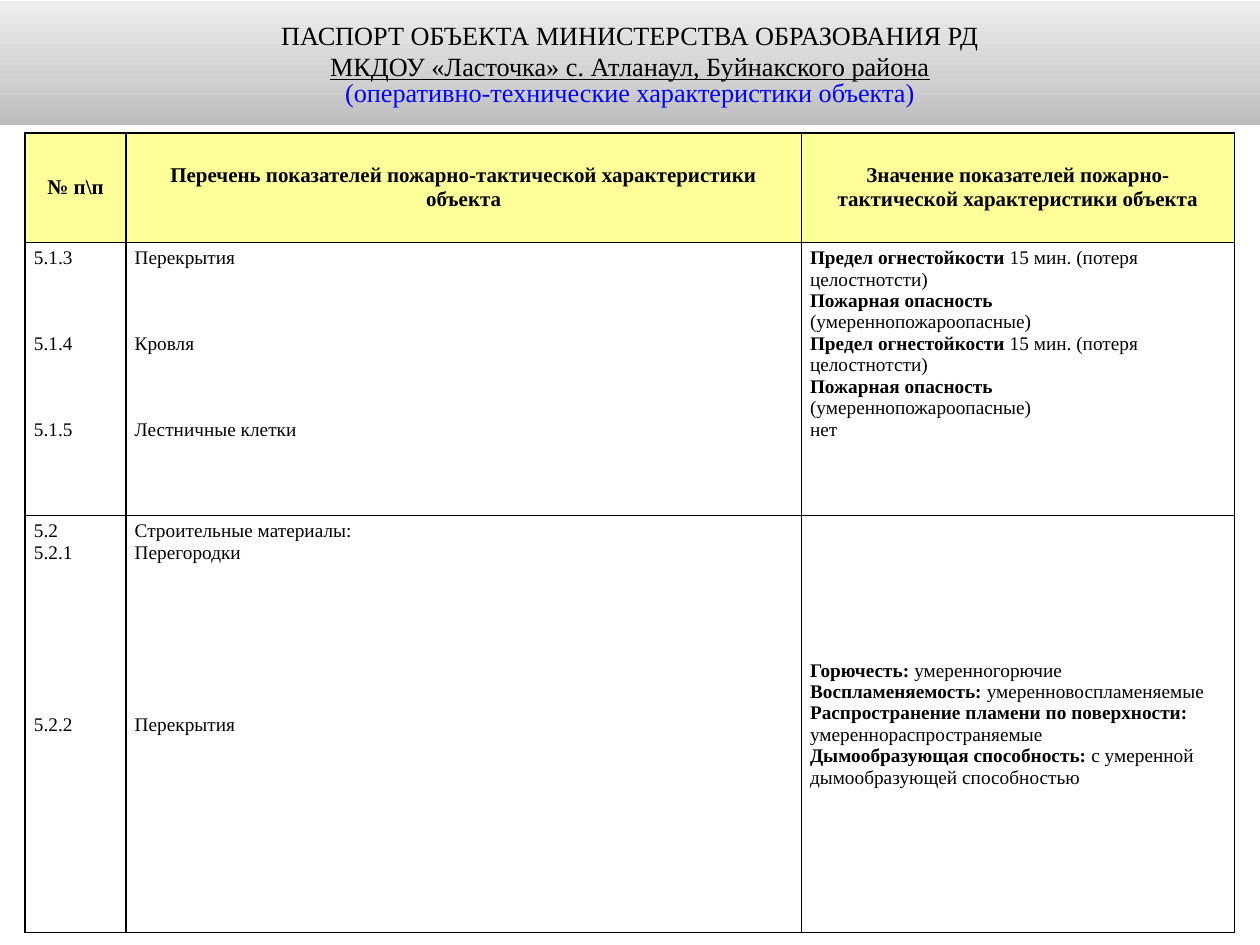
from copy import deepcopy

from lxml import etree
from pptx import Presentation
from pptx.dml.color import RGBColor
from pptx.enum import text
from pptx.oxml.ns import qn
from pptx.util import Pt

FONT = "Times New Roman"
LINE = 12.28  # height of one 11 pt line
COLUMNS = [57.6, 385.9, 247.7]
ROWS = [62.6, 156.2, 238.3]
MIDDLE = text.MSO_ANCHOR.MIDDLE
TOP = text.MSO_ANCHOR.TOP

HEADER = ["№ п\\п",
          "Перечень показателей пожарно-тактической характеристики объекта",
          "Значение показателей пожарно-тактической характеристики объекта"]
FIRE_LIMITS = [("Предел огнестойкости ", "15 мин. (потеря целостнотсти)"),
               ("Пожарная опасность", ""),
               ("", "(умереннопожароопасные)")]
MATERIALS = [("Горючесть: ", "умеренногорючие"),
             ("Воспламеняемость: ", "умеренновоспламеняемые"),
             ("Распространение пламени по поверхности:", ""),
             ("", "умереннораспространяемые"),
             ("Дымообразующая способность: ", "с умеренной дымообразующей способностью")]


def rgb(value):
    return RGBColor.from_string(value)


def add_run(p, content, size=11, color="000000", bold=False, underline=False):
    r = p.add_run()
    r.text = content
    f = r.font
    f.name, f.size, f.bold, f.underline = FONT, Pt(size), bold, underline
    f.color.rgb = rgb(color)


def paragraphs(tf, count):
    """Yield the first paragraph of the frame, then new ones."""
    yield tf.paragraphs[0]
    for _ in range(count - 1):
        yield tf.add_paragraph()


def add_title(s):
    sp = s.shapes.title
    sp.left, sp.top, sp.width, sp.height = Pt(0), Pt(0.7), Pt(720), Pt(70.6)
    sp.fill.gradient()
    sp.fill.gradient_angle = 90
    stops = sp.fill.gradient_stops
    last = stops[1]._gs
    last.addprevious(deepcopy(last))
    for stop, (position, color) in zip(
            sp.fill.gradient_stops, [(0, "BCBCBC"), (0.35, "D0D0D0"), (1, "EDEDED")]):
        stop.position = position
        stop.color.rgb = rgb(color)

    tf = sp.text_frame
    tf.word_wrap = True
    tf.auto_size = text.MSO_AUTO_SIZE.NONE
    tf.vertical_anchor = MIDDLE
    lines = [("ПАСПОРТ ОБЪЕКТА МИНИСТЕРСТВА ОБРАЗОВАНИЯ РД", {}),
             ("МКДОУ «Ласточка» с. Атланаул, Буйнакского района", {"underline": True}),
             ("(оперативно-технические характеристики объекта)", {"color": "0000FF"})]
    for p, (content, style) in zip(paragraphs(tf, len(lines)), lines):
        p.alignment = text.PP_ALIGN.CENTER
        add_run(p, content, size=15, **style)
    p.line_spacing = 0.8


def set_borders(cell):
    pr = cell._tc.get_or_add_tcPr()
    for i, side in enumerate(("a:lnL", "a:lnR", "a:lnT", "a:lnB")):
        ln = etree.Element(qn(side), w=str(Pt(1)))
        fill = etree.SubElement(ln, qn("a:solidFill"))
        etree.SubElement(fill, qn("a:srgbClr"), val="000000")
        pr.insert(i, ln)


def format_cell(cell, fill, anchor):
    cell.fill.solid()
    cell.fill.fore_color.rgb = rgb(fill)
    cell.vertical_anchor = anchor
    cell.margin_left = cell.margin_right = Pt(5)
    cell.margin_top = cell.margin_bottom = Pt(2.9)
    set_borders(cell)


def fill_header(cell, content):
    format_cell(cell, "FFFF99", MIDDLE)
    p = cell.text_frame.paragraphs[0]
    p.alignment = text.PP_ALIGN.CENTER
    add_run(p, content, size=12, bold=True)


def fill_list(cell, items):
    """Write (text, number of free lines above) items."""
    format_cell(cell, "FFFFFF", TOP)
    for p, (content, gap) in zip(paragraphs(cell.text_frame, len(items)), items):
        p.space_before = Pt(round(gap * LINE, 1))
        add_run(p, content)


def fill_values(cell, items, anchor=TOP):
    """Write (bold text, plain text) items."""
    format_cell(cell, "FFFFFF", anchor)
    for p, (label, value) in zip(paragraphs(cell.text_frame, len(items)), items):
        if label:
            add_run(p, label, bold=True)
        if value:
            add_run(p, value)


def add_table(s):
    table = s.shapes.add_table(len(ROWS), len(COLUMNS), Pt(14.4), Pt(75.9),
                               Pt(sum(COLUMNS)), Pt(sum(ROWS))).table
    table.first_row = table.horz_banding = False
    for column, width in zip(table.columns, COLUMNS):
        column.width = Pt(width)
    for row, height in zip(table.rows, ROWS):
        row.height = Pt(height)

    for i, content in enumerate(HEADER):
        fill_header(table.cell(0, i), content)
    fill_list(table.cell(1, 0), [("5.1.3", 0), ("5.1.4", 3), ("5.1.5", 3)])
    fill_list(table.cell(1, 1), [("Перекрытия", 0), ("Кровля", 3), ("Лестничные клетки", 3)])
    fill_values(table.cell(1, 2), FIRE_LIMITS * 2 + [("", "нет")])
    fill_list(table.cell(2, 0), [("5.2", 0), ("5.2.1", 0), ("5.2.2", 7)])
    fill_list(table.cell(2, 1), [("Строительные материалы:", 0), ("Перегородки", 0),
                                 ("Перекрытия", 7)])
    fill_values(table.cell(2, 2), MATERIALS, MIDDLE)


def main():
    prs = Presentation()
    prs.slide_width, prs.slide_height = Pt(720), Pt(540)
    s = prs.slides.add_slide(prs.slide_layouts[5])
    add_title(s)
    add_table(s)
    prs.save("out.pptx")


if __name__ == "__main__":
    main()
